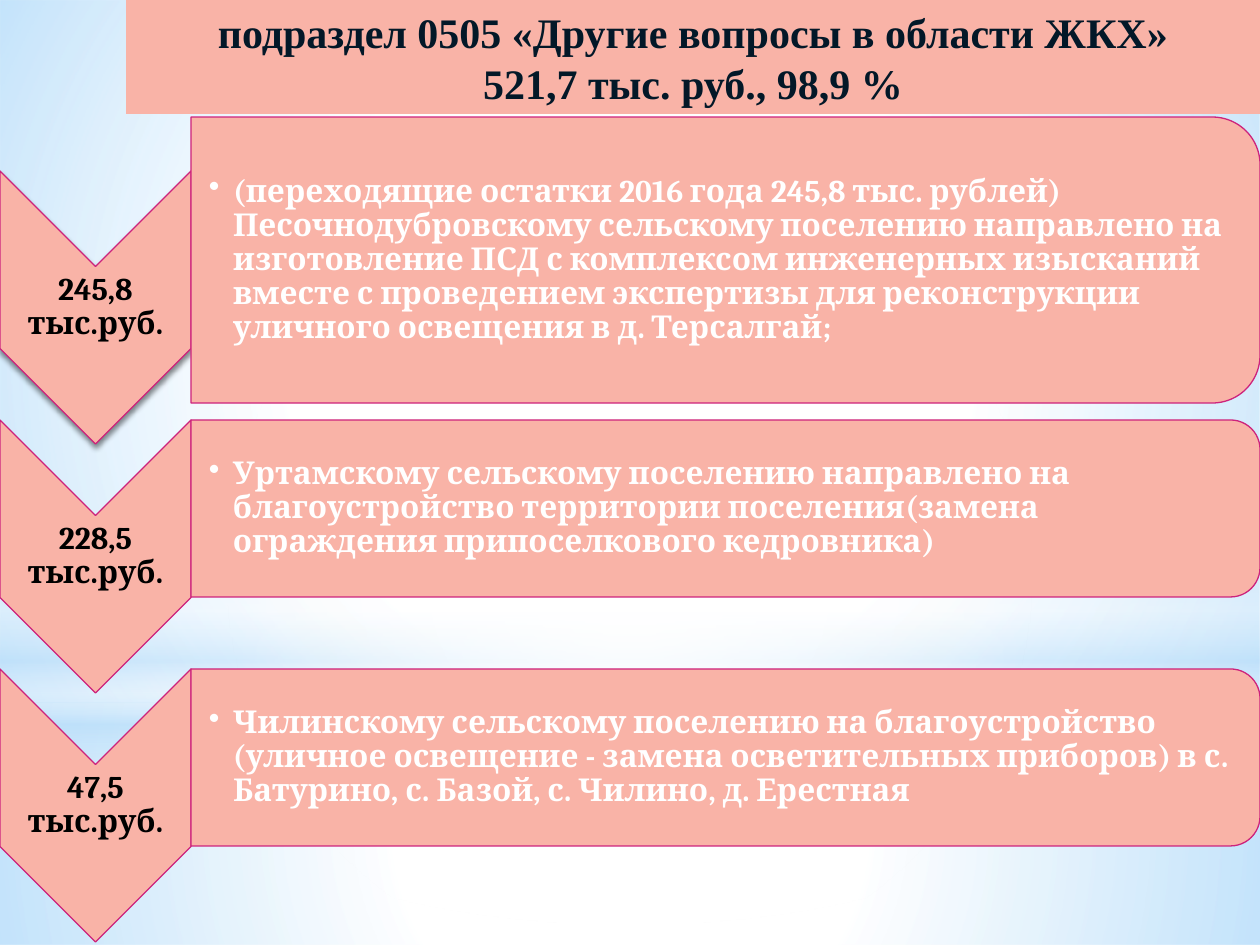
from dataclasses import dataclass
from typing import Optional

from pptx import Presentation
from pptx.dml.color import RGBColor
from pptx.enum.shapes import MSO_SHAPE as SHAPE
from pptx.enum.text import MSO_ANCHOR as ANCHOR, MSO_AUTO_SIZE as AUTO, PP_ALIGN as ALIGN
from pptx.oxml import parse_xml
from pptx.oxml.ns import nsdecls, qn
from pptx.util import Pt

PX = 914400 / 126
WIDTH, HEIGHT = 1260, 945
COLORS = {
    "panel": "F9B3A7",
    "border": "CD237C",
    "title": "031828",
    "amount": "000000",
    "detail": "FFFFFF",
    "white": "FFFFFF",
    "sky": "B4DCFA",
}
TITLE = "подраздел 0505 «Другие вопросы в области ЖКХ»\n521,7 тыс. руб., 98,9 %"
ARROW_W, ARROW_H = 191, 273
NOTCH = ARROW_W // 2


@dataclass(frozen=True)
class Glow:
    box: tuple[int, int, int, int]
    stops: tuple[tuple[int, str, int], ...]
    kind: SHAPE = SHAPE.RECTANGLE
    angle: Optional[int] = None


@dataclass(frozen=True)
class Row:
    arrow_top: int
    panel_top: int
    panel_h: int
    amount: str
    detail: str
    shadow: bool = False


GLOWS = (
    Glow((0, 703, WIDTH, 242), ((0, "white", 91), (37, "white", 76), (100, "sky", 79))),
    Glow((0, 0, WIDTH, 703), ((0, "white", 89), (48, "white", 62), (100, "sky", 79))),
    Glow((0, 519, WIDTH, 315),
         ((0, "white", 0), (29, "white", 30), (45, "sky", 40),
          (55, "white", 26), (65, "sky", 60), (100, "white", 0)), angle=90),
    Glow((0, 220, WIDTH, 703), ((0, "white", 100), (56, "white", 0)), SHAPE.OVAL),
)
ROWS = (
    Row(171, 117, 286, "245,8 тыс.руб.",
        "(переходящие остатки 2016 года 245,8 тыс. рублей) Песочнодубровскому "
        "сельскому поселению направлено на изготовление ПСД с комплексом "
        "инженерных изысканий вместе с проведением экспертизы для реконструкции "
        "уличного освещения в д. Терсалгай;", True),
    Row(420, 420, 177, "228,5 тыс.руб.",
        "Уртамскому сельскому поселению направлено на благоустройство территории "
        "поселения(замена ограждения припоселкового кедровника)"),
    Row(669, 669, 177, "47,5 тыс.руб.",
        "Чилинскому сельскому поселению на благоустройство (уличное освещение - "
        "замена осветительных приборов) в с. Батурино, с. Базой, с. Чилино, "
        "д. Ерестная"),
)


def emu(px: float) -> int:
    return round(px * PX)


def rgb(name: str) -> RGBColor:
    return RGBColor.from_string(COLORS[name])


def write(tf, text: str, *, font: str, size: int, color: str, align=ALIGN.LEFT,
          spacing: float = 1.0, margins=(1, 1, 1, 1), bullet: bool = False) -> None:
    tf.word_wrap = True
    tf.auto_size = AUTO.NONE
    tf.vertical_anchor = ANCHOR.MIDDLE
    tf.margin_left, tf.margin_top, tf.margin_right, tf.margin_bottom = map(emu, margins)
    for i, line in enumerate(text.split("\n")):
        p = tf.add_paragraph() if i else tf.paragraphs[0]
        p.alignment = align
        p.line_spacing = spacing
        p.space_before = p.space_after = Pt(0)
        if bullet:
            pPr = p._p.get_or_add_pPr()
            pPr.set("marL", str(emu(24)))
            pPr.set("indent", str(emu(-24)))
            pPr.append(parse_xml(f'<a:buChar {nsdecls("a")} char="•"/>'))
        r = p.add_run()
        r.text = line
        r.font.name, r.font.size, r.font.bold = font, Pt(size), True
        r.font.color.rgb = rgb(color)


def draw_glow(s, glow: Glow) -> None:
    sp = s.shapes.add_shape(glow.kind, *map(emu, glow.box))
    sp.shadow.inherit = False
    sp.line.fill.background()
    sp.fill.background()
    stops = "".join(
        f'<a:gs pos="{pos * 1000}"><a:srgbClr val="{COLORS[color]}">'
        f'<a:alpha val="{alpha * 1000}"/></a:srgbClr></a:gs>'
        for pos, color, alpha in glow.stops)
    if glow.angle is None:
        course = ('<a:path path="circle"><a:fillToRect l="50000" t="50000" '
                  'r="50000" b="50000"/></a:path>')
    else:
        course = f'<a:lin ang="{glow.angle * 60000}" scaled="0"/>'
    spPr = sp.element.spPr
    spPr.replace(spPr.find(qn("a:noFill")), parse_xml(
        f'<a:gradFill {nsdecls("a")} rotWithShape="1"><a:gsLst>{stops}</a:gsLst>'
        f'{course}</a:gradFill>'))


def draw_turned(s, kind: SHAPE, x: int, y: int, w: int, h: int):
    sp = s.shapes.add_shape(kind, emu(x + (w - h) / 2), emu(y + (h - w) / 2), emu(h), emu(w))
    sp.rotation = 90
    sp.shadow.inherit = False
    sp.fill.solid()
    sp.fill.fore_color.rgb = rgb("panel")
    sp.line.color.rgb = rgb("border")
    sp.line.width = Pt(0.75)
    return sp


def add_text(s, box: tuple[int, int, int, int], text: str, **style) -> None:
    write(s.shapes.add_textbox(*map(emu, box)).text_frame, text,
          font="Cambria", size=18, spacing=0.9, **style)


def draw_row(s, row: Row) -> None:
    arrow = draw_turned(s, SHAPE.CHEVRON, 0, row.arrow_top, ARROW_W, ARROW_H)
    if row.shadow:
        arrow.element.spPr.find(qn("a:effectLst")).append(parse_xml(
            f'<a:outerShdw {nsdecls("a")} blurRad="{Pt(3.1)}" dist="{Pt(1.8)}" '
            'dir="5400000" rotWithShape="0"><a:srgbClr val="000000">'
            '<a:alpha val="45000"/></a:srgbClr></a:outerShdw>'))
    add_text(s, (0, row.arrow_top + NOTCH, ARROW_W, ARROW_H - 2 * NOTCH),
             row.amount, color="amount", align=ALIGN.CENTER)
    panel_w = WIDTH - ARROW_W
    draw_turned(s, SHAPE.ROUND_2_SAME_RECTANGLE, ARROW_W, row.panel_top, panel_w, row.panel_h)
    inset = round(row.panel_h * 0.05)
    add_text(s, (ARROW_W, row.panel_top + inset, panel_w - inset, row.panel_h - 2 * inset),
             row.detail, color="detail", margins=(18, 1, 1, 1), bullet=True)


def draw_title(s) -> None:
    title = s.shapes.title
    title.left, title.top, title.width, title.height = map(emu, (126, 0, 1134, 114))
    title.fill.solid()
    title.fill.fore_color.rgb = rgb("panel")
    write(title.text_frame, TITLE, font="Times New Roman", size=24, color="title",
          align=ALIGN.CENTER, margins=(13, 6, 13, 6))
    title.element.getparent().append(title.element)


def main() -> None:
    prs = Presentation()
    prs.slide_width, prs.slide_height = emu(WIDTH), emu(HEIGHT)
    s = prs.slides.add_slide(prs.slide_layouts[5])
    s.background.fill.solid()
    s.background.fill.fore_color.rgb = rgb("white")
    for glow in GLOWS:
        draw_glow(s, glow)
    draw_title(s)
    for row in ROWS:
        draw_row(s, row)
    prs.save("out.pptx")


if __name__ == "__main__":
    main()
